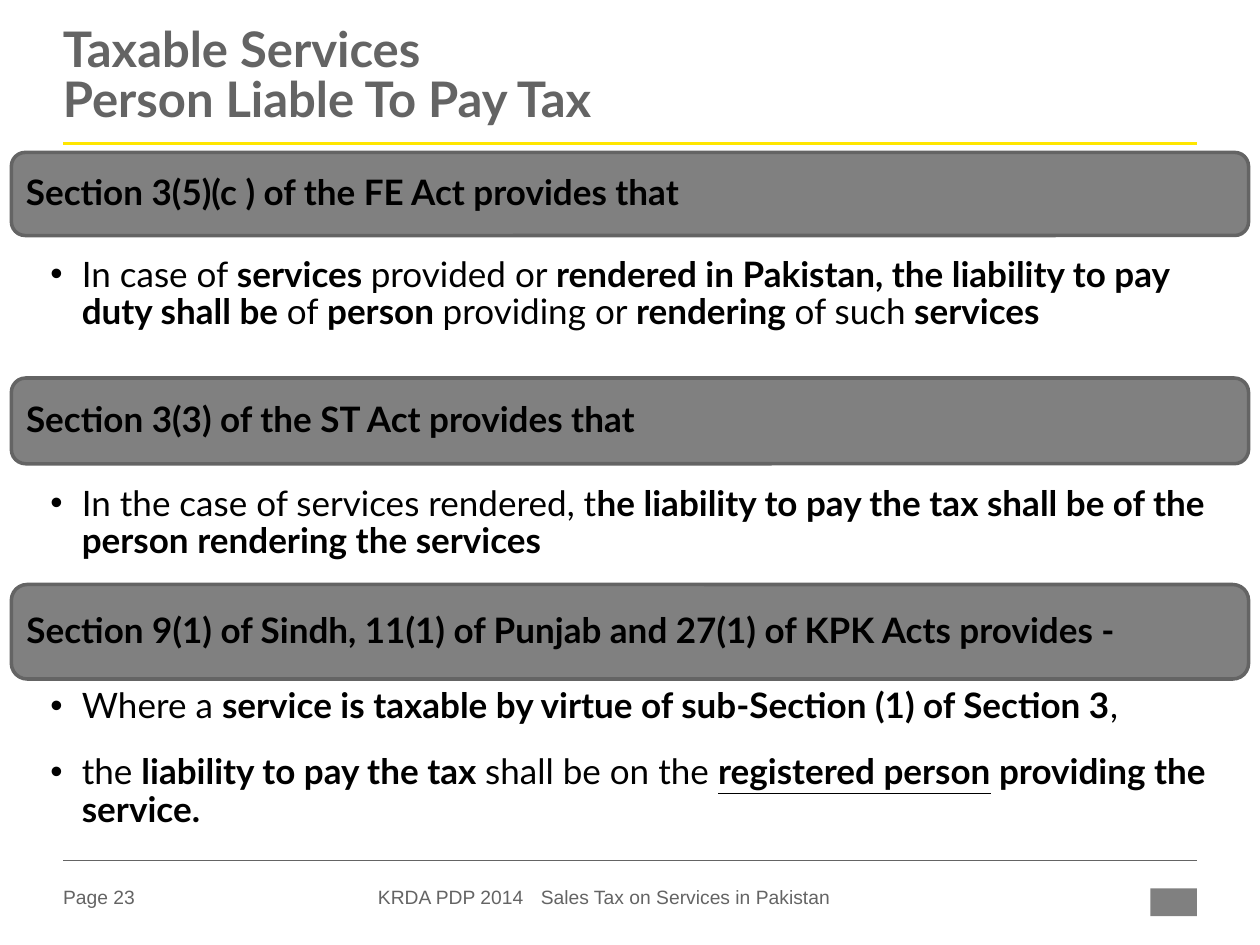
from dataclasses import dataclass
from pptx import Presentation
from pptx.dml.color import RGBColor
from pptx.enum.shapes import MSO_CONNECTOR, MSO_SHAPE
from pptx.enum.text import MSO_ANCHOR
from pptx.oxml.ns import qn
from pptx.util import Pt
from lxml.etree import SubElement


@dataclass(frozen=True)
class Theme:
    ink: str = "000000"
    grey: str = "646464"
    fill: str = "808080"
    accent: str = "FFE600"
    face: str = "Lato"
    plain: str = "Arial"
    title: int = 28
    body: int = 20
    foot: int = 11


class Deck:
    def __init__(self, theme, slide):
        self.theme = theme
        self.slide = slide

    def run(self, para, text, size, color, face, bold=False, line=False):
        run = para.add_run()
        run.text = text
        font = run.font
        font.name, font.size, font.bold = face, Pt(size), bold
        font.color.rgb = RGBColor.from_string(color)
        if line:
            font.underline = True

    def frame(self, shape, anchor, inset=0):
        frame = shape.text_frame
        frame.word_wrap = True
        frame.vertical_anchor = anchor
        frame.margin_left = frame.margin_right = Pt(inset)
        frame.margin_top = frame.margin_bottom = Pt(inset)
        return frame

    def box(self, x, y, w, h, anchor=MSO_ANCHOR.TOP):
        shape = self.slide.shapes.add_textbox(Pt(x), Pt(y), Pt(w), Pt(h))
        return self.frame(shape, anchor)

    def rule(self, y, color, width):
        line = self.slide.shapes.add_connector(
            MSO_CONNECTOR.STRAIGHT, Pt(36), Pt(y), Pt(684), Pt(y))
        line.line.color.rgb = RGBColor.from_string(color)
        line.line.width = Pt(width)
        SubElement(line._element.spPr, qn("a:effectLst"))

    def block(self, kind, x, y, w, h):
        shape = self.slide.shapes.add_shape(kind, Pt(x), Pt(y), Pt(w), Pt(h))
        shape.shadow.inherit = False
        shape.fill.solid()
        shape.fill.fore_color.rgb = RGBColor.from_string(self.theme.fill)
        shape.line.fill.background()
        return shape

    def title(self, lines):
        look = self.theme
        para = self.box(36, 15.84, 648, 67.68).paragraphs[0]
        para.line_spacing = 0.85
        for i, text in enumerate(lines):
            if i:
                para.add_line_break()
            self.run(para, text, look.title, look.grey, look.face, True)

    def bar(self, y, h, text):
        look = self.theme
        shape = self.block(MSO_SHAPE.ROUNDED_RECTANGLE, 6.5, y, 707, h)
        shape.line.color.rgb = RGBColor.from_string(look.grey)
        shape.line.width = Pt(2)
        para = self.frame(shape, MSO_ANCHOR.MIDDLE, 6).paragraphs[0]
        para.alignment = 1
        para.line_spacing = 0.9
        self.run(para, text, look.body, look.ink, look.face, True)

    def points(self, y, h, items):
        look = self.theme
        frame = self.box(28.8, y, 673, h)
        for i, parts in enumerate(items):
            para = frame.add_paragraph() if i else frame.paragraphs[0]
            para.line_spacing = 0.9
            para.space_before = Pt(16 if i else 0)
            props = para._p.get_or_add_pPr()
            props.set("marL", str(Pt(18)))
            props.set("indent", str(-Pt(18)))
            SubElement(props, qn("a:buFont")).set("typeface", look.plain)
            SubElement(props, qn("a:buChar")).set("char", "•")
            for text, style in parts:
                self.run(para, text, look.body, look.ink, look.face,
                         "b" in style, "u" in style)

    def foot(self, x, w, text):
        look = self.theme
        para = self.box(x, 504.7, w, 15.8, MSO_ANCHOR.MIDDLE).paragraphs[0]
        self.run(para, text, look.foot, look.grey, look.plain)


SECTIONS = [
    (87.1, 47.5, "Section 3(5)(c ) of the FE Act provides that", 146.8, 60, [
        [("In case of ", ""), ("services ", "b"), ("provided or ", ""),
         ("rendered in Pakistan, the liability to pay duty shall be ", "b"),
         ("of", ""), (" person ", "b"), ("providing or ", ""),
         ("rendering ", "b"), ("of such", ""), (" services", "b")]]),
    (216, 49, "Section 3(3) of the ST Act provides that", 277.6, 50, [
        [("In the case of services rendered, t", ""),
         ("he liability to pay the tax shall be of the person "
          "rendering the services", "b")]]),
    (334, 54, "Section 9(1) of Sindh, 11(1) of Punjab and 27(1) of KPK Acts "
     "provides -", 393.4, 85, [
        [("Where a ", ""),
         ("service is taxable by virtue of sub-Section (1) of Section 3", "b"),
         (",", "")],
        [("the ", ""), ("liability to pay the tax ", "b"),
         ("shall be on the ", ""), ("registered person", "bu"),
         (" providing the service.", "b")]]),
]


def main():
    show = Presentation()
    show.slide_width, show.slide_height = Pt(720), Pt(540)
    look = Theme()
    deck = Deck(look, show.slides.add_slide(show.slide_layouts[6]))
    deck.rule(82.1, look.accent, 1.5)
    deck.rule(491.8, look.grey, 0.25)
    deck.title(["Taxable Services", "Person Liable To Pay Tax"])
    for top, high, head, y, h, items in SECTIONS:
        deck.bar(top, high, head)
        deck.points(y, h, items)
    deck.foot(36, 57, "Page 23")
    deck.foot(216, 88, "KRDA PDP 2014")
    deck.foot(309, 178, "Sales Tax on Services in Pakistan")
    deck.block(MSO_SHAPE.RECTANGLE, 657.4, 507.6, 26.6, 16)
    show.save("out.pptx")


if __name__ == "__main__":
    main()
